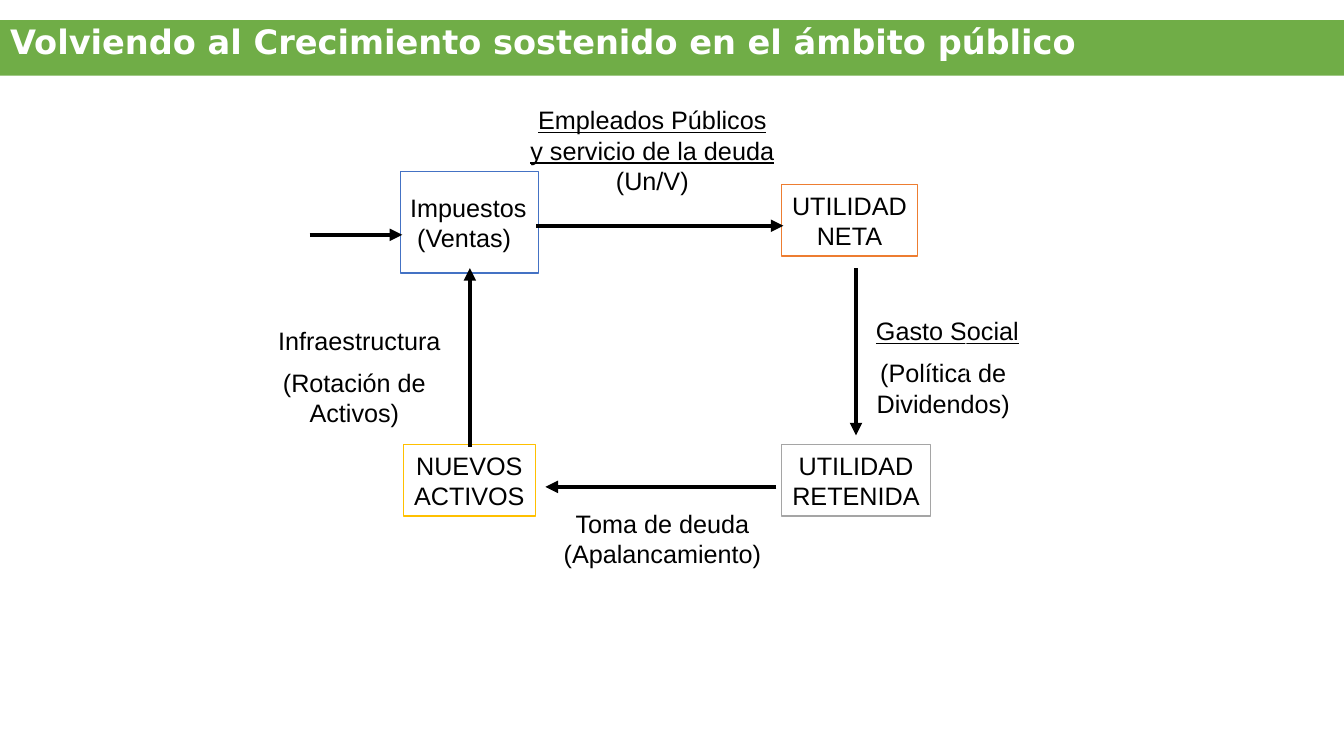
from pptx import Presentation
from pptx import util as u
from pptx.dml.color import RGBColor
from pptx.enum import shapes, text
from pptx.oxml.ns import qn
from lxml import etree

PX = 9144  # 100 px to the inch
MID, LEFT = text.PP_ALIGN.CENTER, text.PP_ALIGN.LEFT
TOP, HALF = text.MSO_ANCHOR.TOP, text.MSO_ANCHOR.MIDDLE
BLACK, WHITE = "000000", "FFFFFF"


def paint(part, hue):
    if hasattr(part, "solid"):
        part.solid()
        part.fore_color.rgb = RGBColor.from_string(hue)
    else:
        part.rgb = RGBColor.from_string(hue)


def write(shape, lines, align=MID, anchor=TOP, wrap=False, hue=BLACK, under=0, **form):
    """Fill a shape with lines; the first `under` of them are underlined."""
    frame = shape.text_frame
    frame.word_wrap, frame.vertical_anchor = wrap, anchor
    frame.auto_size = text.MSO_AUTO_SIZE.NONE
    for i, line in enumerate(lines):
        para = frame.paragraphs[0] if i == 0 else frame.add_paragraph()
        para.alignment = align
        run = para.add_run()
        run.text = line
        look = {"name": "Arial", "size": u.Pt(18), "underline": i < under, **form}
        for key, val in look.items():
            setattr(run.font, key, val)
        paint(run.font.color, hue)


deck = Presentation()
deck.slide_width, deck.slide_height = 1333 * PX, 750 * PX
slide = deck.slides.add_slide(deck.slide_layouts[5])
draw = slide.shapes

# Title band
title = draw.title
band = {"left": 0, "top": 20, "width": 1333, "height": 55}
for key, val in band.items():
    setattr(title, key, val * PX)
paint(title.fill, "70AD47")
write(title, ["Volviendo al Crecimiento sostenido en el ámbito público"], LEFT,
      wrap=True, hue=WHITE, name="DejaVu Sans", size=u.Pt(24), bold=True)
title.text_frame.paragraphs[0].line_spacing = 0.9

# Labels beside the arrows
labels = [
    ((515, 99, 264, 101), ["Empleados Públicos", "y servicio de la deuda", "(Un/V)"], MID, 2),
    ((270, 359, 163, 71), ["(Rotación de", "Activos)"], MID, 0),
    ((548, 499, 218, 71), ["Toma de deuda", "(Apalancamiento)"], MID, 0),
    ((859, 350, 153, 71), ["(Política de", "Dividendos)"], MID, 0),
    ((266, 318, 183, 40), ["Infraestructura"], LEFT, 0),
    ((859, 308, 163, 40), ["Gasto Social"], LEFT, 1),
]
for area, lines, align, under in labels:
    label = draw.add_textbox(*[n * PX for n in area])
    write(label, lines, align, under=under)

# Boxes of the cycle
boxes = [
    ((397, 170, 137, 101), ["Impuestos", " (Ventas)"], LEFT, "4472C4"),
    ((775, 183, 135, 71), ["UTILIDAD", "NETA"], MID, "ED7D31"),
    ((400, 441, 131, 71), ["NUEVOS", "ACTIVOS"], MID, "FFC000"),
    ((775, 441, 148, 71), ["UTILIDAD", "RETENIDA"], MID, "A5A5A5"),
]
for area, lines, align, edge in boxes:
    box = draw.add_shape(shapes.MSO_SHAPE.RECTANGLE, *[n * PX for n in area])
    box.shadow.inherit = False
    paint(box.fill, WHITE)
    paint(box.line.fill, edge)
    box.line.width = u.Pt(1)
    write(box, lines, align, HALF)

# Arrows, each from its start to its tip
arrows = [
    (307, 233, 399, 233),
    (532, 224, 777, 224),
    (849, 266, 849, 432),
    (466, 443, 466, 266),
    (770, 483, 541, 483),
]
for ends in arrows:
    arrow = draw.add_connector(shapes.MSO_CONNECTOR.STRAIGHT, *[n * PX for n in ends])
    paint(arrow.line.fill, BLACK)
    arrow.line.width = u.Pt(3)
    etree.SubElement(arrow.line._get_or_add_ln(), qn("a:tailEnd"), type="triangle")
    etree.SubElement(arrow._element.spPr, qn("a:effectLst"))

# White brackets around the social spending label
for left, flip in ((866, False), (947, True)):
    hook = draw.add_shape(shapes.MSO_SHAPE.LEFT_BRACKET, left * PX, 316 * PX, 11 * PX, 73 * PX)
    hook.shadow.inherit = False
    hook.adjustments[0] = 0.58
    hook.fill.background()
    paint(hook.line.fill, WHITE)
    hook.line.width = u.Pt(0.75)
    if flip:
        hook._element.spPr.xfrm.set("flipH", "1")

deck.save("out.pptx")
